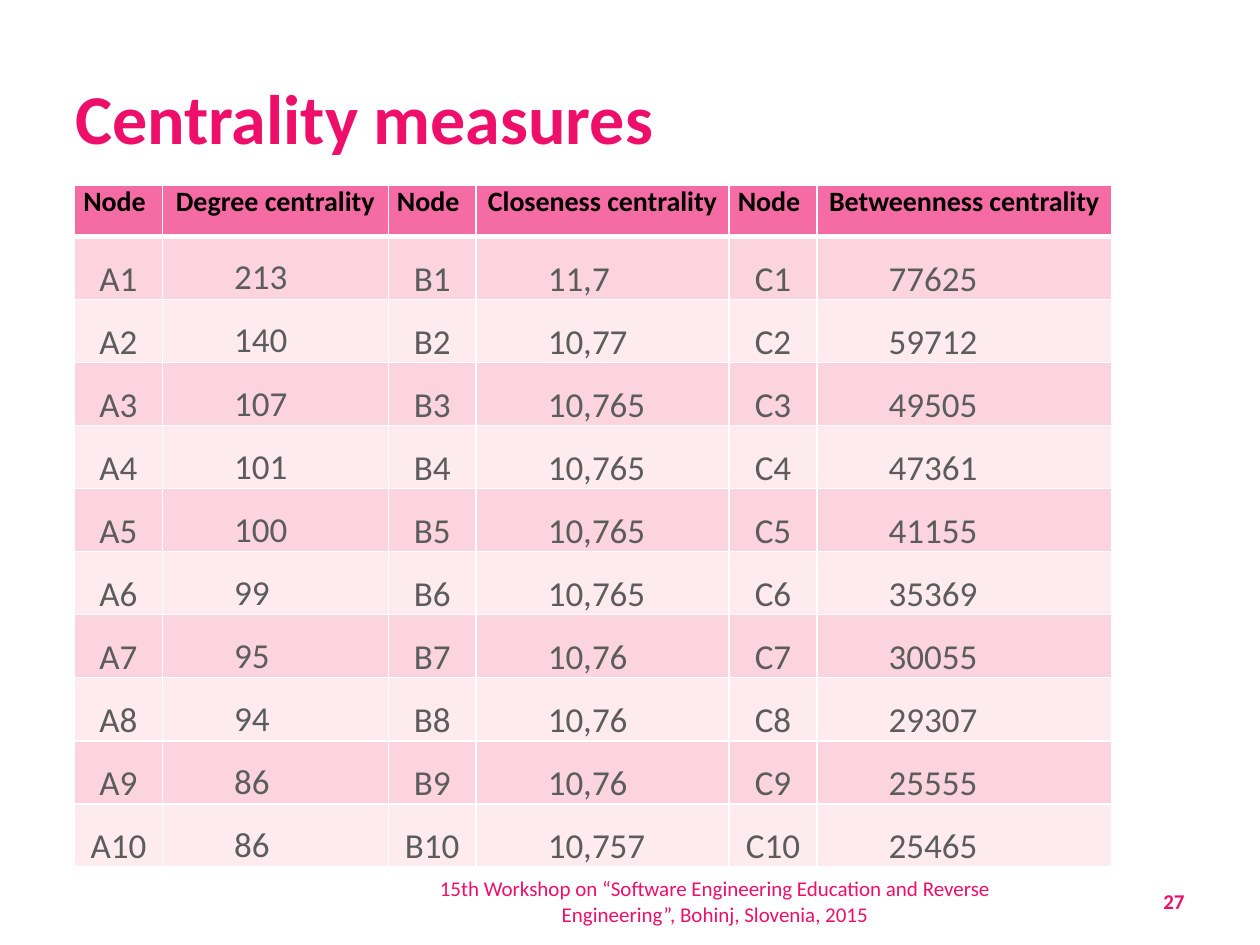
from lxml import etree
from pptx import Presentation
from pptx import util as u
from pptx.dml.color import RGBColor
from pptx.enum import text
from pptx.oxml import ns

Pt = u.Pt
PINK = RGBColor(0xED, 0x0F, 0x69)
HEADER_PINK = RGBColor(0xF5, 0x6B, 0xA3)
BANDS = (RGBColor(0xFB, 0xD4, 0xE0), RGBColor(0xFD, 0xEB, 0xF0))
WHITE = RGBColor(0xFF, 0xFF, 0xFF)
BLACK = RGBColor(0, 0, 0)
GREY = RGBColor(0x5C, 0x5C, 0x5C)
LEFT, CENTER, RIGHT, JUSTIFY = (
    text.PP_ALIGN.LEFT, text.PP_ALIGN.CENTER, text.PP_ALIGN.RIGHT, text.PP_ALIGN.JUSTIFY)

HEADERS = ("Degree centrality", "Closeness centrality", "Betweenness centrality")
DEGREE = ("213", "140", "107", "101", "100", "99", "95", "94", "86", "86")
CLOSENESS = ("11,7", "10,77", "10,765", "10,765", "10,765", "10,765",
             "10,76", "10,76", "10,76", "10,757")
BETWEENNESS = ("77625", "59712", "49505", "47361", "41155",
               "35369", "30055", "29307", "25555", "25465")
COLUMN_WIDTHS = (50.2, 129.1, 50.2, 144.6, 50.2, 168.5)
ROW_HEIGHT = 29.3


class Deck:
    def __init__(self, s, font="Calibri"):
        self.s = s
        self.font = font

    def run(self, p, words, size, color, bold=False):
        r = p.add_run()
        r.text = words
        r.font.name = self.font
        r.font.size = Pt(size)
        r.font.bold = bold
        r.font.color.rgb = color

    def text_box(self, box, words, size, align=LEFT, bold=False):
        sp = self.s.shapes.add_textbox(*map(Pt, box))
        tf = sp.text_frame
        tf.word_wrap = True
        tf.vertical_anchor = text.MSO_ANCHOR.MIDDLE
        p = tf.paragraphs[0]
        p.alignment = align
        self.run(p, words, size, PINK, bold)

    def borders(self, cell, top, bottom):
        """Draw white cell edges; the sides are 1 pt wide."""
        tc_pr = cell._tc.get_or_add_tcPr()
        for side, width in (("L", 1), ("R", 1), ("T", top), ("B", bottom)):
            ln = etree.SubElement(tc_pr, ns.qn(f"a:ln{side}"), w=str(Pt(width)))
            fill = etree.SubElement(ln, ns.qn("a:solidFill"))
            etree.SubElement(fill, ns.qn("a:srgbClr"), val=str(WHITE))

    def cell(self, cell, row, col, words):
        header, is_node = row == 0, col % 2 == 0
        cell.margin_left = cell.margin_right = Pt(5)
        cell.margin_top = cell.margin_bottom = 0
        self.borders(cell, 3 if row == 1 else 1, 3 if header else 1)
        cell.fill.solid()
        cell.fill.fore_color.rgb = HEADER_PINK if header else BANDS[(row - 1) % 2]
        p = cell.text_frame.paragraphs[0]
        if header:
            p.alignment = JUSTIFY if is_node else CENTER
            self.run(p, words, 16, BLACK, True)
            return
        cell.vertical_anchor = text.MSO_ANCHOR.BOTTOM if col < 2 else text.MSO_ANCHOR.TOP
        p.alignment = CENTER if is_node else JUSTIFY
        if not is_node:
            p.level = 1
            p_pr = p._p.get_or_add_pPr()
            p_pr.set("marL", str(Pt(36)))
            p_pr.set("indent", "0")
        if col == 1:
            p.space_after = Pt(6)
        else:
            p.line_spacing = 1.5
        self.run(p, words, 20, GREY)

    def table(self, box, rows, widths, row_height):
        table = self.s.shapes.add_table(len(rows), len(widths), *map(Pt, box)).table
        for column, width in zip(table.columns, widths):
            column.width = Pt(width)
        for i, row in enumerate(rows):
            table.rows[i].height = Pt(row_height)
            for j, words in enumerate(row):
                self.cell(table.cell(i, j), i, j, words)


def table_rows():
    """Pair each measure with its node names, A1 to C10."""
    rows = [[words for header in HEADERS for words in ("Node", header)]]
    for n, values in enumerate(zip(DEGREE, CLOSENESS, BETWEENNESS), 1):
        rows.append([words for letter, value in zip("ABC", values)
                     for words in (f"{letter}{n}", value)])
    return rows


def main():
    prs = Presentation()
    prs.slide_width, prs.slide_height = Pt(720), Pt(540)
    deck = Deck(prs.slides.add_slide(prs.slide_layouts[6]))
    deck.text_box((36, 21.6, 648, 90), "Centrality measures", 40, bold=True)
    deck.table((42.6, 105.8, sum(COLUMN_WIDTHS), 389.5), table_rows(),
               COLUMN_WIDTHS, ROW_HEIGHT)
    deck.text_box((212.4, 500.5, 392.4, 28.8),
                  "15th Workshop on “Software Engineering Education and Reverse "
                  "Engineering”, Bohinj, Slovenia, 2015", 12, CENTER)
    deck.text_box((612, 500.5, 72, 28.8), "27", 12, RIGHT, True)
    prs.save("out.pptx")


if __name__ == "__main__":
    main()
